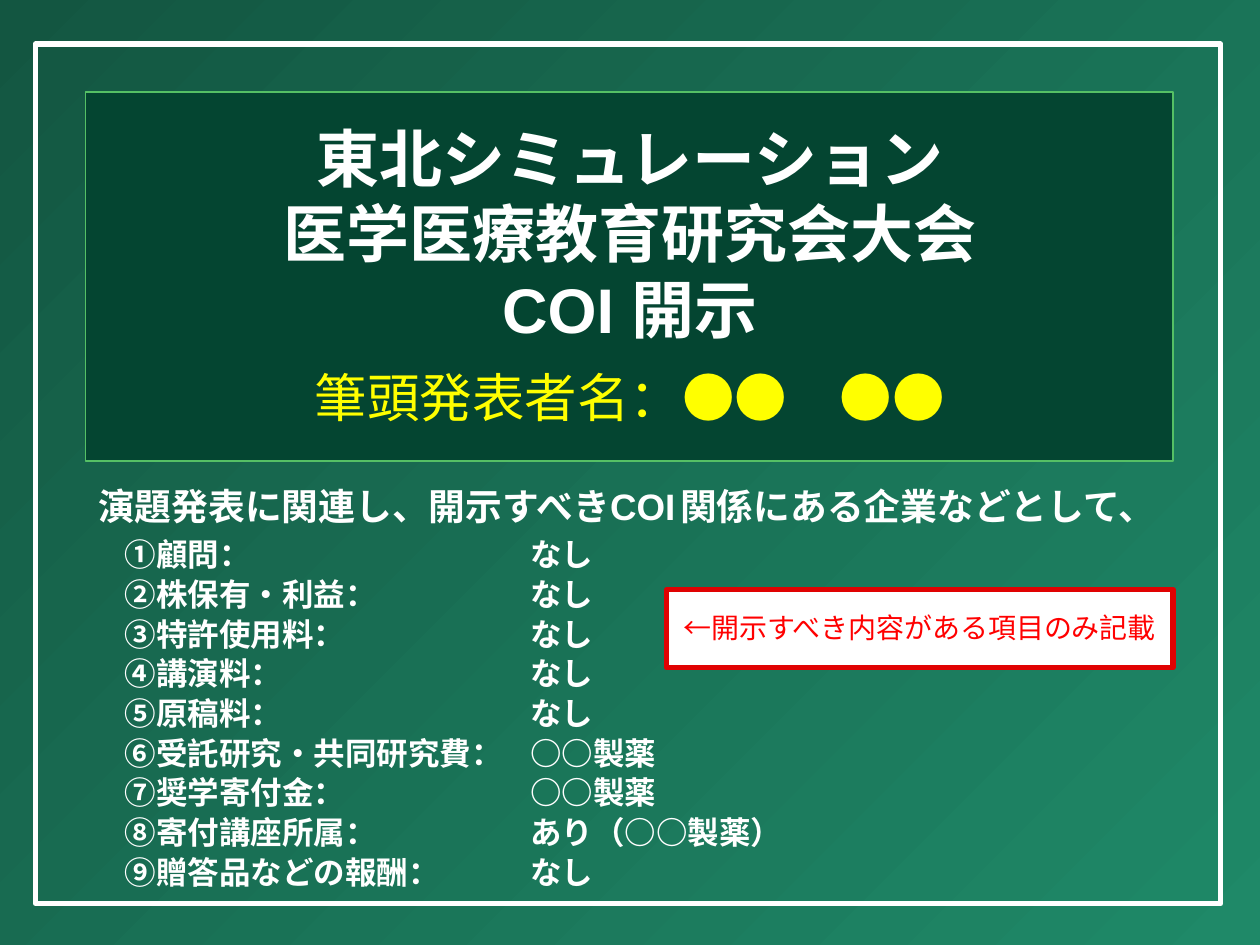
from dataclasses import dataclass
from pptx import Presentation
from pptx.dml.color import RGBColor as Rgb
from pptx.enum.shapes import MSO_SHAPE as Kind
from pptx.enum.text import MSO_ANCHOR as Anchor, MSO_AUTO_SIZE as Fit, PP_ALIGN as Align
from pptx.util import Inches, Pt


@dataclass(frozen=True)
class Theme:
    font: str = "Arial"
    dark: str = "135641"
    light: str = "1F8968"
    panel: str = "044531"
    edge: str = "55C065"
    white: str = "FFFFFF"
    name: str = "FFFF00"
    alert: str = "E00202"
    note: str = "FF0000"
    head: int = 36
    sub: int = 30
    lead: int = 21
    gap: int = 10
    item: int = 18
    hint: int = 16


LOOK = Theme()
COLS, ROWS = 100, 75
WIDE, HIGH = Inches(10), Inches(7.5)

ITEMS = [
    ("①顧問：", "なし"),
    ("②株保有・利益：", "なし"),
    ("③特許使用料：", "なし"),
    ("④講演料：", "なし"),
    ("⑤原稿料：", "なし"),
    ("⑥受託研究・共同研究費：", "○○製薬"),
    ("⑦奨学寄付金：", "○○製薬"),
    ("⑧寄付講座所属：", "あり（○○製薬）"),
    ("⑨贈答品などの報酬：", "なし"),
]


def grid(x, y, w, h):
    return [round(n * size / count) for n, size, count in
            ((x, WIDE, COLS), (y, HIGH, ROWS), (w, WIDE, COLS), (h, HIGH, ROWS))]


def paint(slide):
    fill = slide.background.fill
    fill.gradient()
    fill.gradient_angle = 315
    for stop, tint, place in zip(fill.gradient_stops, (LOOK.dark, LOOK.light), (0, 1)):
        stop.color.rgb = Rgb.from_string(tint)
        stop.position = place


def block(slide, cells, line, width, fill=None):
    shape = slide.shapes.add_shape(Kind.RECTANGLE, *grid(*cells))
    shape.shadow.inherit = False
    if fill:
        shape.fill.solid()
        shape.fill.fore_color.rgb = Rgb.from_string(fill)
    else:
        shape.fill.background()
    shape.line.color.rgb = Rgb.from_string(line)
    shape.line.width = Pt(width)
    return shape


def frame(shape, wrap=True):
    body = shape.text_frame
    body.word_wrap = wrap
    body.auto_size = Fit.SHAPE_TO_FIT_TEXT
    body.vertical_anchor = Anchor.MIDDLE
    return body


def area(slide, cells, wrap=True):
    return frame(slide.shapes.add_textbox(*grid(*cells)), wrap)


def write(body, text, size, tint=LOOK.white, bold=True, align=Align.LEFT,
          space=1.0, join=False):
    para = body.paragraphs[-1]
    if para.runs and not join:
        para = body.add_paragraph()
    para.alignment = align
    para.line_spacing = space
    para.space_before = Pt(0)
    run = para.add_run()
    run.text = text
    run.font.name = LOOK.font
    run.font.size = Pt(size)
    run.font.bold = bold
    run.font.color.rgb = Rgb.from_string(tint)


def title(slide, panel):
    shape = slide.shapes.title
    shape.left, shape.top, shape.width, shape.height = grid(21.1, 9.2, 57.8, 25)
    panel.element.addnext(shape.element)
    body = frame(shape, wrap=False)
    for text in ("東北シミュレーション", "医学医療教育研究会大会", "COI 開示"):
        write(body, text, LOOK.head, align=Align.CENTER)
    write(body, "筆頭発表者名：●●　●●", LOOK.sub, LOOK.name, False, Align.CENTER, 1.3)


def lead(slide):
    body = area(slide, (6.8, 36.8, 86.5, 5.6))
    for text, size in (("演題発表に関連し、開示すべきCOI", LOOK.lead), (" ", LOOK.gap),
                       ("関係にある企業などとして、", LOOK.lead)):
        write(body, text, size, space=1.3, join=True)


def column(slide, x, w, texts):
    body = area(slide, (x, 41.8, w, 29.4))
    for text in texts:
        write(body, text, LOOK.item, space=1.05)


def hint(slide):
    block(slide, (52.9, 46.8, 40.2, 6.2), LOOK.alert, 3, LOOK.white)
    body = area(slide, (53.1, 47.9, 39.8, 3.7), wrap=False)
    write(body, "←開示すべき内容がある項目のみ記載", LOOK.hint, LOOK.note, False, Align.CENTER)


def main():
    deck = Presentation()
    deck.slide_width, deck.slide_height = WIDE, HIGH
    slide = deck.slides.add_slide(deck.slide_layouts[5])
    paint(slide)
    block(slide, (2.8, 3.5, 94.1, 68.2), LOOK.white, 3)
    panel = block(slide, (6.8, 7.3, 86.3, 29.3), LOOK.edge, 1, LOOK.panel)
    title(slide, panel)
    lead(slide)
    names, states = zip(*ITEMS)
    column(slide, 8.9, 33.5, names)
    column(slide, 41.1, 24.8, states)
    hint(slide)
    deck.save("out.pptx")


if __name__ == "__main__":
    main()
